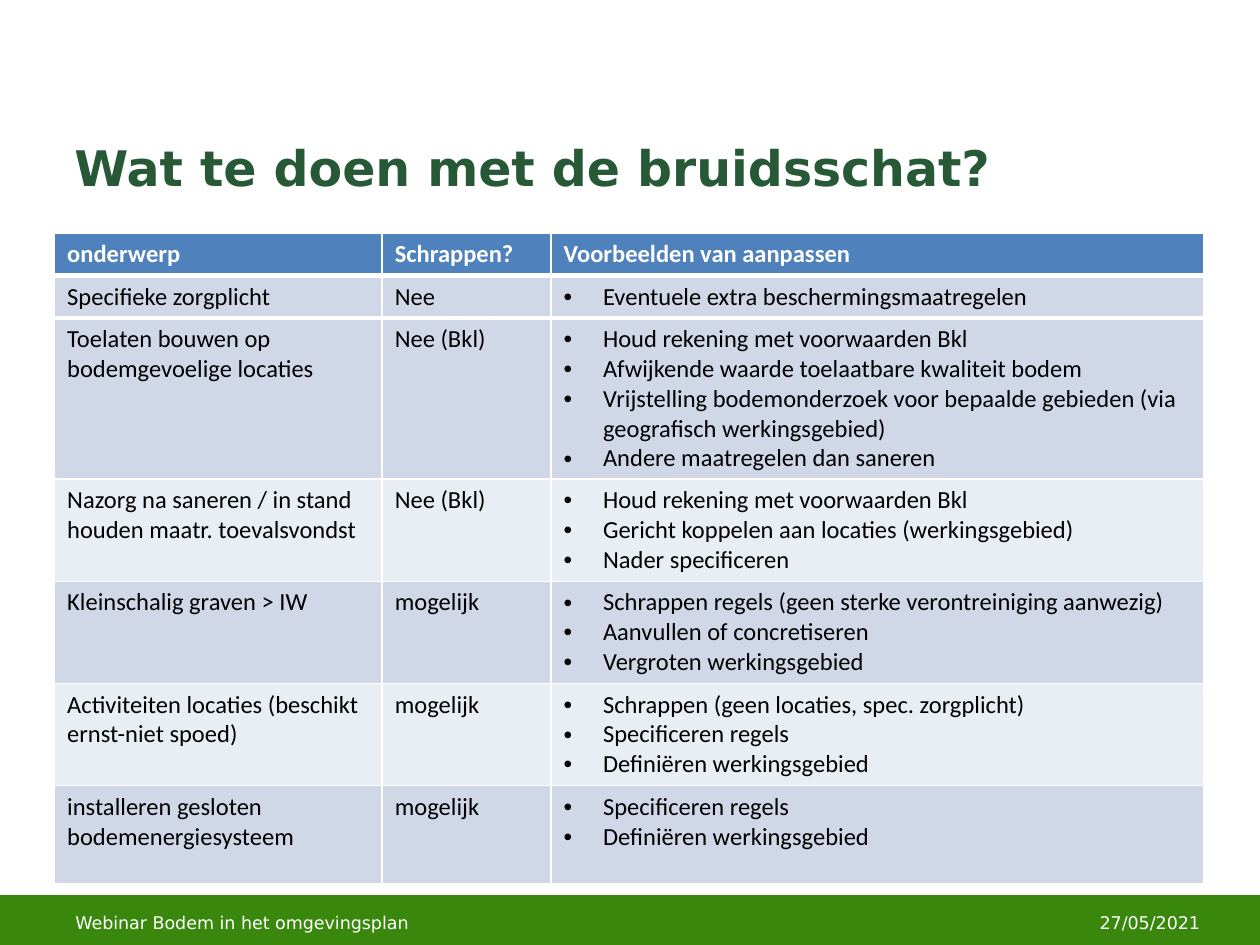
from pptx import Presentation
from pptx.dml.color import RGBColor
from pptx.enum.shapes import MSO_SHAPE
from pptx.enum.text import MSO_ANCHOR, MSO_AUTO_SIZE, PP_ALIGN
from pptx.oxml import parse_xml
from pptx.oxml.ns import nsdecls
from pptx.util import Pt

HUES = {"bar": "39870C", "title": "275937", "head": "4F81BD", "dark": "D0D8E8",
        "light": "E9EDF4", "white": "FFFFFF", "black": "000000"}
SANS, BODY = "DejaVu Sans", "Calibri"
WIDTHS = [187.2, 96.5, 373]
# Row height, fill, subject, scrap or not, examples
ROWS = [
    (24.3, "dark", "Specifieke zorgplicht", "Nee",
     ["Eventuele extra beschermingsmaatregelen"]),
    (92, "dark", "Toelaten bouwen op bodemgevoelige locaties", "Nee (Bkl)",
     ["Houd rekening met voorwaarden Bkl",
      "Afwijkende waarde toelaatbare kwaliteit bodem",
      "Vrijstelling bodemonderzoek voor bepaalde gebieden (via geografisch werkingsgebied)",
      "Andere maatregelen dan saneren"]),
    (58.4, "light", "Nazorg na saneren / in stand houden maatr. toevalsvondst", "Nee (Bkl)",
     ["Houd rekening met voorwaarden Bkl",
      "Gericht koppelen aan locaties (werkingsgebied)",
      "Nader specificeren"]),
    (58.4, "dark", "Kleinschalig graven > IW", "mogelijk",
     ["Schrappen regels (geen sterke verontreiniging aanwezig)",
      "Aanvullen of concretiseren",
      "Vergroten werkingsgebied"]),
    (58.4, "light", "Activiteiten locaties (beschikt ernst-niet spoed)", "mogelijk",
     ["Schrappen (geen locaties, spec. zorgplicht)",
      "Specificeren regels",
      "Definiëren werkingsgebied"]),
    (56.2, "dark", "installeren gesloten bodemenergiesysteem", "mogelijk",
     ["Specificeren regels", "Definiëren werkingsgebied"]),
]


def color(name):
    return RGBColor.from_string(HUES[name])


def style(para, face, size, hue, bold=False):
    for run in para.runs:
        font = run.font
        font.name, font.size, font.bold = face, Pt(size), bold
        font.color.rgb = color(hue)


def add_title(slide, text):
    title = slide.shapes.title
    title.left, title.top, title.width, title.height = Pt(35.3), Pt(75), Pt(648), Pt(52.5)
    frame = title.text_frame
    frame.text = text
    frame.auto_size = MSO_AUTO_SIZE.NONE
    frame.vertical_anchor = MSO_ANCHOR.TOP
    para = frame.paragraphs[0]
    para.alignment = PP_ALIGN.LEFT
    style(para, SANS, 28, "title", True)


def add_bar(slide):
    bar = slide.shapes.add_shape(MSO_SHAPE.RECTANGLE, 0, Pt(512.5), Pt(720), Pt(28))
    bar.shadow.inherit = False
    bar.fill.solid()
    bar.fill.fore_color.rgb = bar.line.color.rgb = color("bar")
    bar.line.width = Pt(2)


def add_note(slide, text, left, width, align):
    box = slide.shapes.add_textbox(Pt(left), Pt(512.5), Pt(width), Pt(28.8))
    frame = box.text_frame
    frame.word_wrap = True
    frame.vertical_anchor = MSO_ANCHOR.MIDDLE
    frame.text = text
    para = frame.paragraphs[0]
    para.alignment = align
    style(para, SANS, 10, "white")


def add_bullet(para):
    props = para._p.get_or_add_pPr()
    props.set("marL", str(Pt(22.5)))
    props.set("indent", str(-Pt(22.5)))
    props.append(parse_xml(f'<a:buFont {nsdecls("a")} typeface="Arial"/>'))
    props.append(parse_xml(f'<a:buChar {nsdecls("a")} char="•"/>'))


def add_edges(cell, top, bottom):
    props = cell._tc.get_or_add_tcPr()
    for spot, (side, width) in enumerate(zip("LRTB", (1, 1, top, bottom))):
        props.insert(spot, parse_xml(
            f'<a:ln{side} {nsdecls("a")} w="{Pt(width)}"><a:solidFill>'
            f'<a:srgbClr val="{HUES["white"]}"/></a:solidFill></a:ln{side}>'))


def fill_cell(cell, lines, fill, head, bullets):
    cell.fill.solid()
    cell.fill.fore_color.rgb = color(fill)
    cell.text_frame.text = "\n".join(lines)
    for para in cell.text_frame.paragraphs:
        if bullets:
            add_bullet(para)
        style(para, BODY, 14, "white" if head else "black", head)


def add_grid(slide):
    rows = [(24.3, "head", "onderwerp", "Schrappen?", ["Voorbeelden van aanpassen"])] + ROWS
    high = sum(row[0] for row in rows)
    grid = slide.shapes.add_table(len(rows), len(WIDTHS), Pt(31.2), Pt(133.2),
                                  Pt(sum(WIDTHS)), Pt(high)).table
    for col, width in zip(grid.columns, WIDTHS):
        col.width = Pt(width)
    for r, (height, fill, topic, scrap, tips) in enumerate(rows):
        grid.rows[r].height = Pt(height)
        for c, lines in enumerate(([topic], [scrap], tips)):
            cell = grid.cell(r, c)
            fill_cell(cell, lines, fill, r == 0, r > 0 and c == 2)
            add_edges(cell, 3 if r in (1, 2) else 1, 3 if r < 2 else 1)


def main():
    deck = Presentation()
    deck.slide_width, deck.slide_height = Pt(720), Pt(540)
    slide = deck.slides.add_slide(deck.slide_layouts[5])
    add_bar(slide)
    add_title(slide, "Wat te doen met de bruidsschat?")
    add_note(slide, "27/05/2021", 525, 167.8, PP_ALIGN.RIGHT)
    add_note(slide, "Webinar Bodem in het omgevingsplan", 36, 228.2, PP_ALIGN.LEFT)
    add_grid(slide)
    deck.save("out.pptx")


if __name__ == "__main__":
    main()
